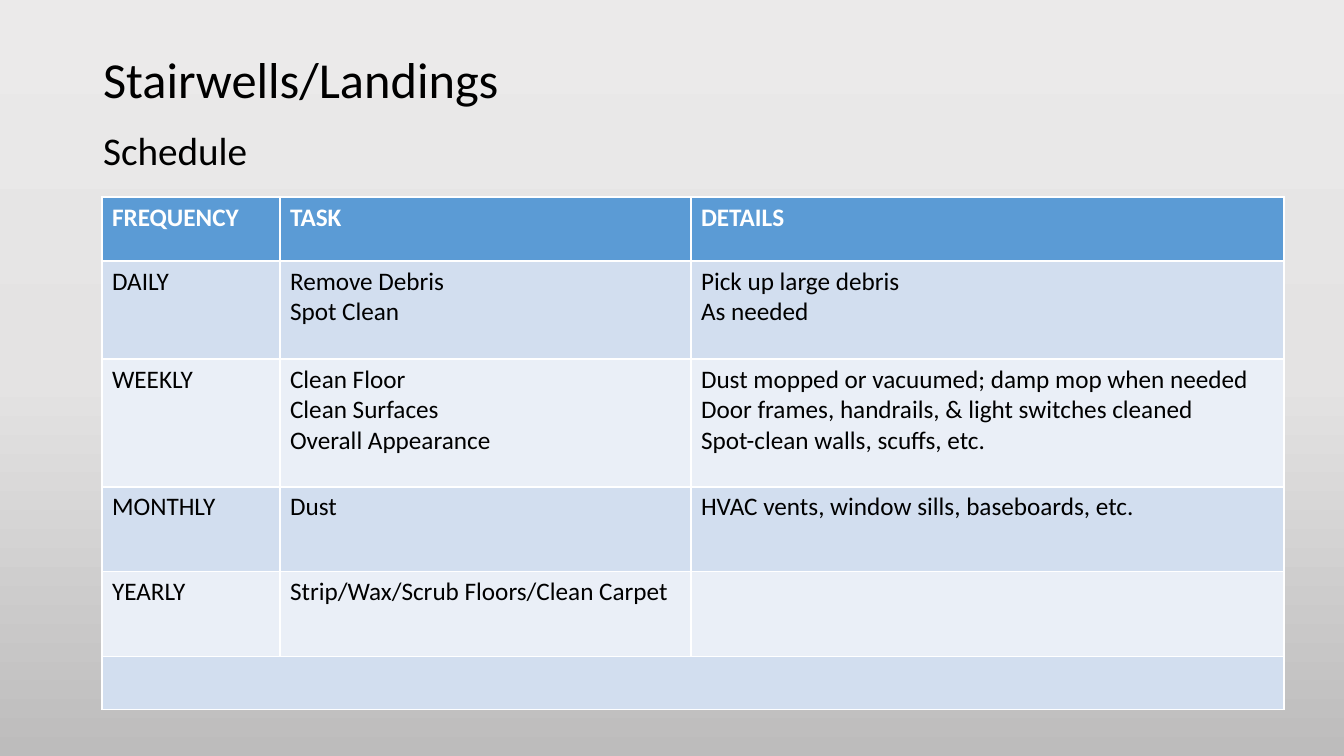
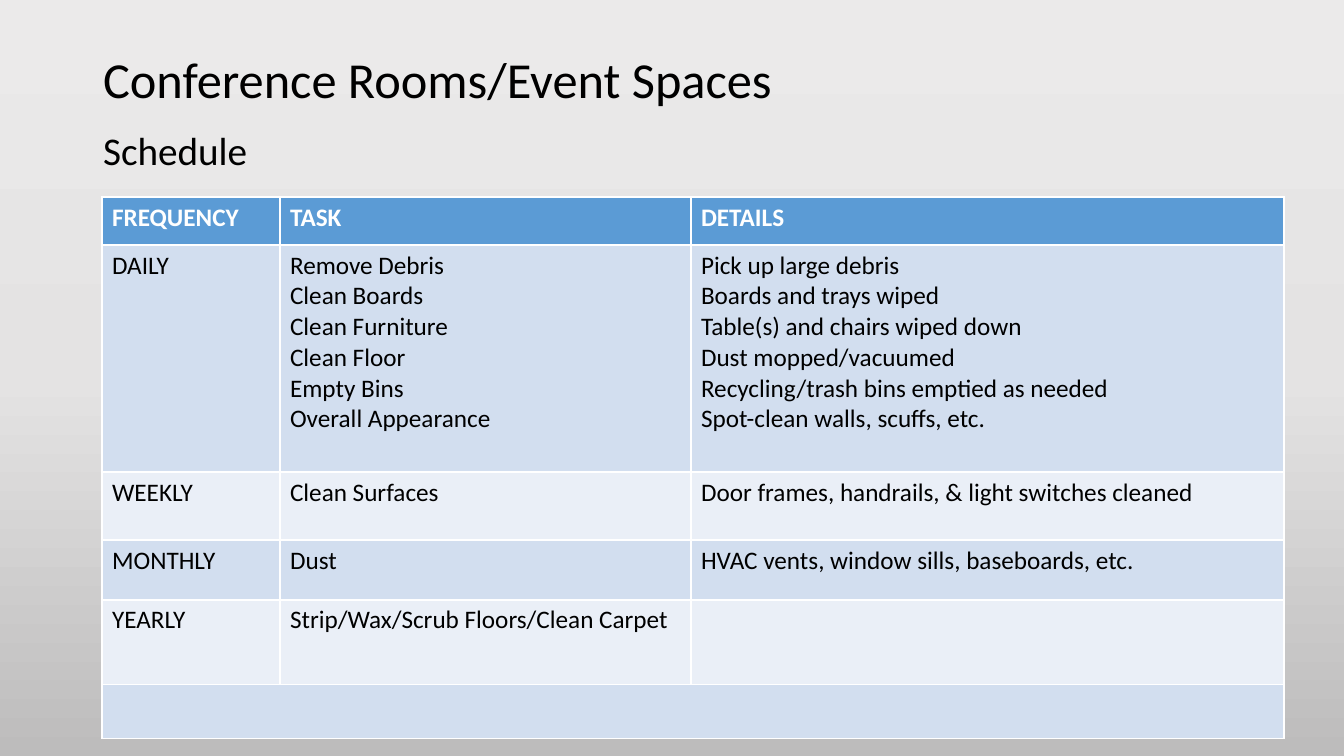
"""Build two cleaning schedule slides, each a title, a subtitle and a table."""
from copy import deepcopy

from pptx import Presentation
from pptx import util as u
from pptx.dml.color import RGBColor
from pptx.enum import text
from pptx.oxml.ns import qn

PX = 12192000 / 1344
FONT = "Calibri"
COLORS = {"text": "000000", "header_text": "FFFFFF", "header": "5B9BD5",
          "odd": "D2DEEF", "even": "EAEFF7"}
BACKGROUND = [(0, "EBEAEA"), (0.5, "E4E3E3"), (1, "BDBCBC")]
TITLE_BOX = (93, 9, 1159, 146)
BODY_BOX = (93, 127, 1159, 542)
TABLE_AT = (102, 197)
COLUMNS = [178, 411, 593]
HEADER = ("FREQUENCY", ["TASK"], ["DETAILS"])
MONTHLY = ("MONTHLY", ["Dust"], ["HVAC vents, window sills, baseboards, etc."])
YEARLY = ("YEARLY", ["Strip/Wax/Scrub Floors/Clean Carpet"], [])

SLIDES = [
    {"title": "Stairwells/Landings",
     "heights": [64, 98, 128, 85, 85, 53],
     "tasks": [
         ("DAILY", ["Remove Debris", "Spot Clean"],
          ["Pick up large debris", "As needed"]),
         ("WEEKLY", ["Clean Floor", "Clean Surfaces", "Overall Appearance"],
          ["Dust mopped or vacuumed; damp mop when needed",
           "Door frames, handrails, & light switches cleaned",
           "Spot-clean walls, scuffs, etc."])]},
    {"title": "Conference Rooms/Event Spaces",
     "heights": [48, 227, 68, 60, 85, 54],
     "tasks": [
         ("DAILY",
          ["Remove Debris", "Clean Boards", "Clean Furniture", "Clean Floor",
           "Empty Bins", "Overall Appearance"],
          ["Pick up large debris", "Boards and trays wiped",
           "Table(s) and chairs wiped down", "Dust mopped/vacuumed",
           "Recycling/trash bins emptied as needed",
           "Spot-clean walls, scuffs, etc."]),
         ("WEEKLY", ["Clean Surfaces"],
          ["Door frames, handrails, & light switches cleaned"])]},
]


def px(n):
    return u.Emu(round(n * PX))


def rgb(name):
    return RGBColor.from_string(COLORS[name])


def set_all(obj, values):
    for name, value in values.items():
        setattr(obj, name, value)


def format_text(tf, size, color="text", bold=False, **paragraph):
    for p in tf.paragraphs:
        set_all(p, paragraph)
        for r in p.runs:
            set_all(r.font, {"name": FONT, "size": u.Pt(size), "bold": bold})
            r.font.color.rgb = rgb(color)


def set_background(master):
    fill = master.background.fill
    fill.gradient()
    fill.gradient_angle = 270
    stops = master.element.find(".//" + qn("a:gsLst"))
    stops.append(deepcopy(stops[0]))
    for stop, (position, color) in zip(fill.gradient_stops, BACKGROUND):
        stop.position = position
        stop.color.rgb = RGBColor.from_string(color)


def fill_placeholder(sp, box, words, size, anchor, **paragraph):
    set_all(sp, dict(zip(("left", "top", "width", "height"), map(px, box))))
    tf = sp.text_frame
    set_all(tf, {"text": words, "vertical_anchor": anchor, "word_wrap": True,
                 "auto_size": text.MSO_AUTO_SIZE.NONE})
    format_text(tf, size, alignment=text.PP_ALIGN.LEFT, line_spacing=0.9,
                **paragraph)


def add_schedule(s, tasks, heights):
    rows = [HEADER, *tasks, MONTHLY, YEARLY, ("", [], [])]
    table = s.shapes.add_table(len(rows), len(COLUMNS), *map(px, TABLE_AT),
                               px(sum(COLUMNS)), px(sum(heights))).table
    for column, width in zip(table.columns, COLUMNS):
        column.width = px(width)
    for i, (frequency, task, details) in enumerate(rows):
        table.rows[i].height = px(heights[i])
        band = "header" if i == 0 else "odd" if i % 2 else "even"
        color = "header_text" if i == 0 else "text"
        for cell, lines in zip(table.rows[i].cells, ([frequency], task, details)):
            cell.text = "\n".join(lines)
            cell.fill.solid()
            cell.fill.fore_color.rgb = rgb(band)
            format_text(cell.text_frame, 18, color, bold=i == 0)
    last = len(rows) - 1
    table.cell(last, 0).merge(table.cell(last, len(COLUMNS) - 1))


def add_slide(prs, content):
    s = prs.slides.add_slide(prs.slide_layouts[1])
    title, body = s.placeholders
    fill_placeholder(title, TITLE_BOX, content["title"], 36,
                     text.MSO_ANCHOR.MIDDLE)
    fill_placeholder(body, BODY_BOX, "Schedule", 28, text.MSO_ANCHOR.TOP,
                     space_before=u.Pt(10))
    pPr = body.text_frame.paragraphs[0]._p.get_or_add_pPr()
    pPr.set("marL", "0")
    pPr.set("indent", "0")
    pPr.append(pPr.makeelement(qn("a:buNone"), {}))
    add_schedule(s, content["tasks"], content["heights"])


def main():
    prs = Presentation()
    set_all(prs, {"slide_width": px(1344), "slide_height": px(756)})
    set_background(prs.slide_master)
    for content in SLIDES:
        add_slide(prs, content)
    prs.save("out.pptx")


if __name__ == "__main__":
    main()
